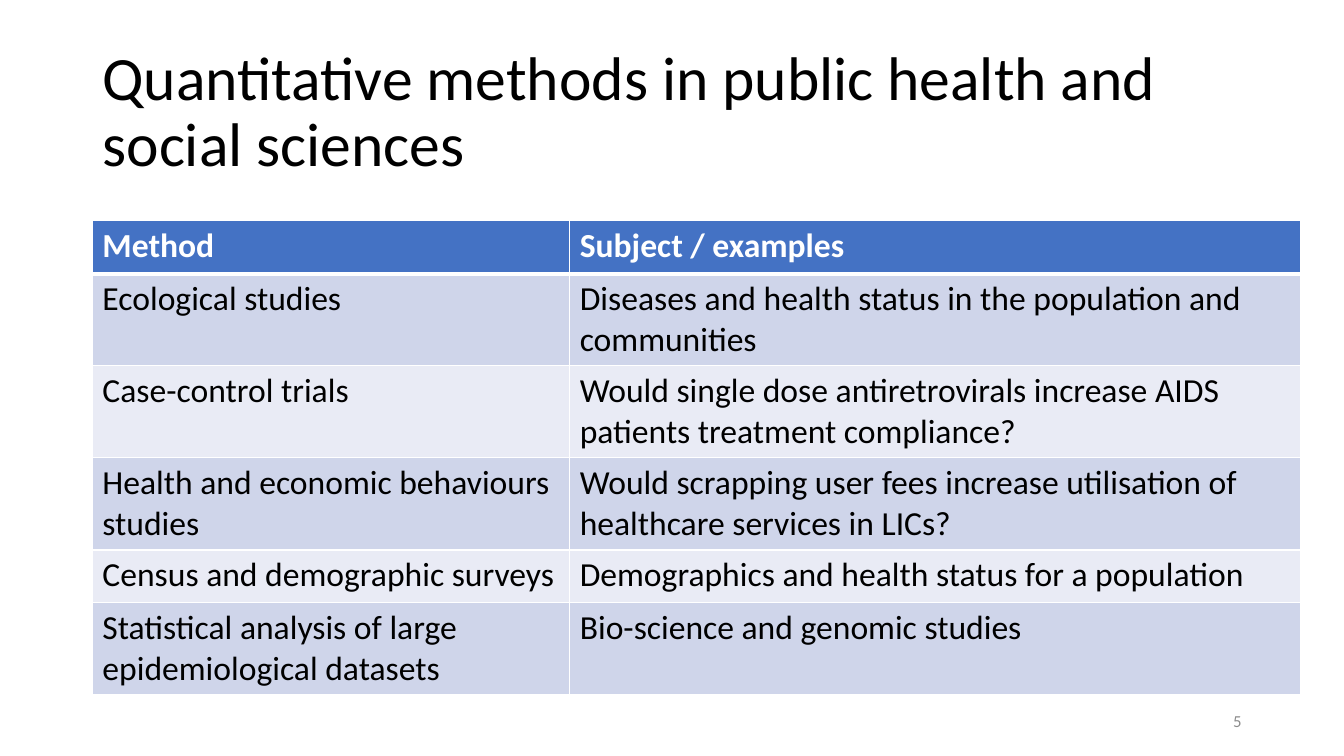
from dataclasses import dataclass

from lxml import etree
from pptx import Presentation
from pptx import util as u
from pptx.dml.color import RGBColor
from pptx.enum import text
from pptx.oxml import ns

BLACK = RGBColor(0x00, 0x00, 0x00)
WHITE = RGBColor(0xFF, 0xFF, 0xFF)
GREY = RGBColor(0x8C, 0x8C, 0x8C)
BLUE = RGBColor(0x44, 0x72, 0xC4)
BAND_DARK = RGBColor(0xCF, 0xD5, 0xEA)
BAND_LIGHT = RGBColor(0xE9, 0xEB, 0xF5)

FONT = "Calibri"
LEFT = u.Pt(66)
ONE_LINE = u.Pt(37.8)
TWO_LINES = u.Pt(65.8)
THIN = u.Pt(1)
THICK = u.Pt(3)


@dataclass(frozen=True)
class MethodRow:
    method: str
    examples: str
    height: int = TWO_LINES


ROWS = [
    MethodRow("Method", "Subject / examples", ONE_LINE),
    MethodRow("Ecological studies",
              "Diseases and health status in the population and communities"),
    MethodRow("Case-control trials",
              "Would single dose antiretrovirals increase AIDS patients treatment compliance?"),
    MethodRow("Health and economic behaviours studies",
              "Would scrapping user fees increase utilisation of healthcare services in LICs?"),
    MethodRow("Census and demographic surveys",
              "Demographics and health status for a population", ONE_LINE),
    MethodRow("Statistical analysis of large epidemiological datasets",
              "Bio-science and genomic studies"),
]
COLUMN_WIDTHS = [u.Pt(341), u.Pt(522)]


def set_text(tf, content: str, size: float, color: RGBColor, bold: bool = False,
             align=text.PP_ALIGN.LEFT) -> None:
    tf.text = content
    p = tf.paragraphs[0]
    p.alignment = align
    font = p.runs[0].font
    font.name = FONT
    font.size = u.Pt(size)
    font.bold = bold
    font.color.rgb = color


def set_borders(cell, top: int, bottom: int) -> None:
    tc_pr = cell._tc.get_or_add_tcPr()
    for side, width in (("L", THIN), ("R", THIN), ("T", top), ("B", bottom)):
        ln = etree.SubElement(tc_pr, ns.qn(f"a:ln{side}"), w=str(int(width)))
        fill = etree.SubElement(ln, ns.qn("a:solidFill"))
        etree.SubElement(fill, ns.qn("a:srgbClr"), val=str(WHITE))


def add_title(s) -> None:
    sp = s.shapes.title
    sp.left, sp.top, sp.width, sp.height = LEFT, u.Pt(29), u.Pt(828), u.Pt(104.4)
    tf = sp.text_frame
    set_text(tf, "Quantitative methods in public health and social sciences", 44, BLACK)
    tf.word_wrap = True
    tf.auto_size = text.MSO_AUTO_SIZE.NONE
    tf.vertical_anchor = text.MSO_ANCHOR.MIDDLE
    tf.paragraphs[0].line_spacing = 0.9


def add_methods_table(s, rows: list[MethodRow]) -> None:
    frame = s.shapes.add_table(len(rows), len(COLUMN_WIDTHS), LEFT, u.Pt(157.7),
                               sum(COLUMN_WIDTHS), sum(r.height for r in rows))
    table = frame.table
    for column, width in zip(table.columns, COLUMN_WIDTHS):
        column.width = width
    for i, row in enumerate(rows):
        header = i == 0
        table.rows[i].height = row.height
        fill = BLUE if header else BAND_DARK if i % 2 else BAND_LIGHT
        for j, content in enumerate((row.method, row.examples)):
            cell = table.cell(i, j)
            set_text(cell.text_frame, content, 24, WHITE if header else BLACK, header)
            set_borders(cell, THICK if i == 1 else THIN, THICK if header else THIN)
            cell.fill.solid()
            cell.fill.fore_color.rgb = fill


def add_page_number(s) -> None:
    sp = s.shapes.add_textbox(u.Pt(678), u.Pt(500.5), u.Pt(216), u.Pt(28.8))
    tf = sp.text_frame
    tf.word_wrap = True
    tf.vertical_anchor = text.MSO_ANCHOR.MIDDLE
    set_text(tf, "5", 12, GREY, align=text.PP_ALIGN.RIGHT)


def main() -> None:
    prs = Presentation()
    prs.slide_width, prs.slide_height = u.Pt(960), u.Pt(540)
    s = prs.slides.add_slide(prs.slide_layouts[5])
    add_title(s)
    add_page_number(s)
    add_methods_table(s, ROWS)
    prs.save("out.pptx")


if __name__ == "__main__":
    main()
